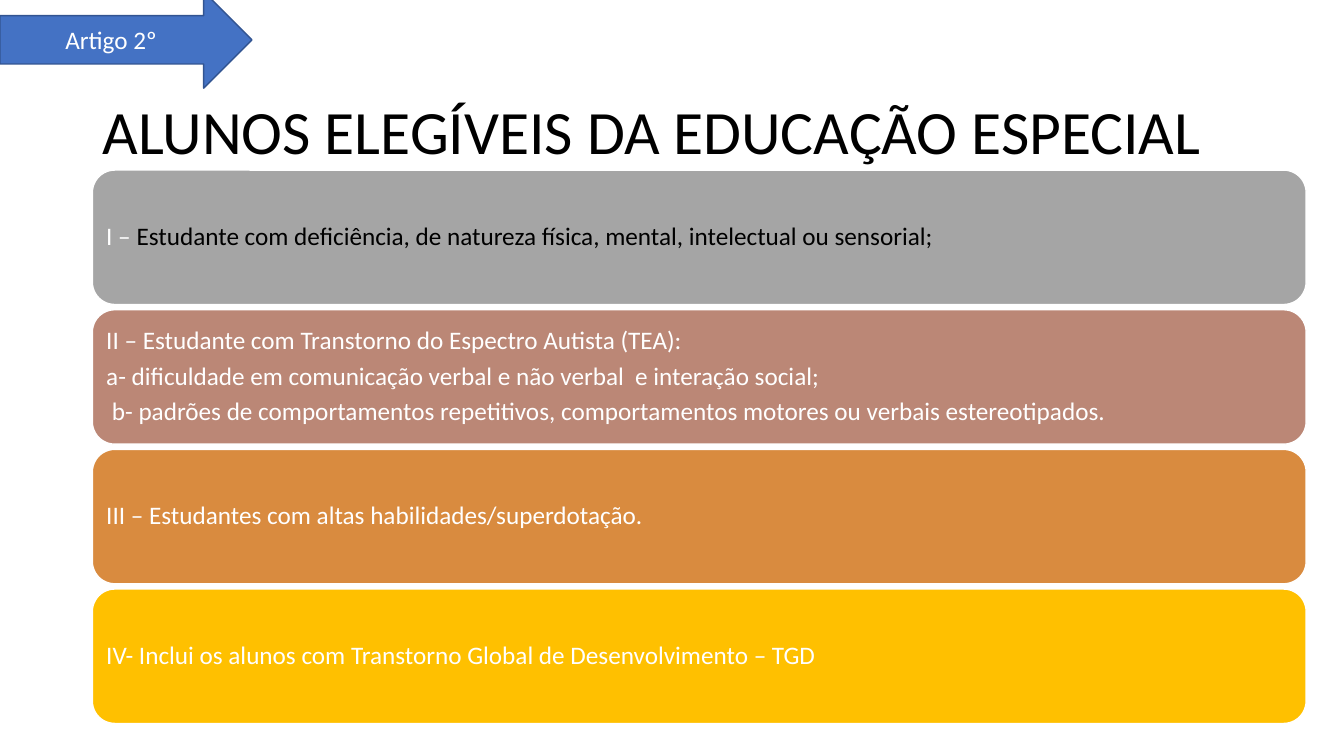
"""Builds the slide listing the students eligible for special education."""
from pptx import Presentation
from pptx.dml.color import RGBColor
from pptx.enum.shapes import MSO_SHAPE
from pptx.enum.text import MSO_ANCHOR, MSO_AUTO_SIZE, PP_ALIGN
from pptx.util import Pt

ROUNDED = MSO_SHAPE.ROUNDED_RECTANGLE
RIGHT_ARROW = MSO_SHAPE.RIGHT_ARROW
MIDDLE = MSO_ANCHOR.MIDDLE
NO_AUTOFIT = MSO_AUTO_SIZE.NONE
LEFT, CENTER = PP_ALIGN.LEFT, PP_ALIGN.CENTER

BLACK = RGBColor(0x00, 0x00, 0x00)
WHITE = RGBColor(0xFF, 0xFF, 0xFF)
GRAY = RGBColor(0xA5, 0xA5, 0xA5)
ROSE = RGBColor(0xBB, 0x87, 0x76)
ORANGE = RGBColor(0xD9, 0x8B, 0x3F)
GOLD = RGBColor(0xFF, 0xC0, 0x00)
BLUE = RGBColor(0x44, 0x72, 0xC4)
DARK_BLUE = RGBColor(0x32, 0x54, 0x91)

FONT = "Calibri"
PX = 9525
MARGIN_LEFT = 88
CARD_TOP, CARD_WIDTH, CARD_HEIGHT, CARD_STEP = 162, 1156, 128, 133
CARD_INSET = 7

CARDS = [
    (GRAY, ["I – Estudante com deficiência, de natureza física, mental, intelectual ou sensorial;"]),
    (ROSE, [
        "II – Estudante com Transtorno do Espectro Autista (TEA):",
        "a- dificuldade em comunicação verbal e não verbal  e interação social;",
        " b- padrões de comportamentos repetitivos, comportamentos motores ou verbais estereotipados.",
    ]),
    (ORANGE, ["III – Estudantes com altas habilidades/superdotação."]),
    (GOLD, ["IV- Inclui os alunos com Transtorno Global de Desenvolvimento – TGD"]),
]


def add_box(kind, left, top, width, height, fill, line):
    shape = slide.shapes.add_shape(kind, left * PX, top * PX, width * PX, height * PX)
    shape.shadow.inherit = False
    shape.fill.solid()
    shape.fill.fore_color.rgb = fill
    shape.line.color.rgb = line
    shape.line.width = Pt(1)
    shape.text_frame.word_wrap = True
    shape.text_frame.vertical_anchor = MIDDLE
    return shape


def format_paragraph(paragraph, size, color, alignment):
    paragraph.alignment = alignment
    for run in paragraph.runs:
        run.font.name = FONT
        run.font.size = Pt(size)
        run.font.color.rgb = color


presentation = Presentation()
presentation.slide_width = 1280 * PX
presentation.slide_height = 720 * PX
slide = presentation.slides.add_slide(presentation.slide_layouts[5])

title = slide.shapes.title
title.left, title.top = MARGIN_LEFT * PX, 78 * PX
title.width, title.height = 1104 * PX, 100 * PX
title.text_frame.text = "ALUNOS ELEGÍVEIS DA EDUCAÇÃO ESPECIAL"
title.text_frame.auto_size = NO_AUTOFIT
title.text_frame.vertical_anchor = MIDDLE
title.text_frame.paragraphs[0].line_spacing = 0.9
format_paragraph(title.text_frame.paragraphs[0], 44, BLACK, LEFT)

for index, (fill, lines) in enumerate(CARDS):
    card = add_box(ROUNDED, MARGIN_LEFT, CARD_TOP + index * CARD_STEP,
                   CARD_WIDTH, CARD_HEIGHT, fill, WHITE)
    frame = card.text_frame
    frame.margin_left = frame.margin_right = CARD_INSET * PX
    frame.margin_top = frame.margin_bottom = CARD_INSET * PX
    frame.text = "\n".join(lines)
    for paragraph in frame.paragraphs:
        paragraph.line_spacing = 0.9
        paragraph.space_after = Pt(6)
        format_paragraph(paragraph, 18, WHITE, LEFT)
    if fill == GRAY:
        paragraph = frame.paragraphs[0]
        numeral, description = lines[0].split("Estudante")
        paragraph.runs[0].text = numeral
        paragraph.add_run().text = "Estudante" + description
        format_paragraph(paragraph, 18, BLACK, LEFT)
        paragraph.runs[0].font.color.rgb = WHITE

arrow = add_box(RIGHT_ARROW, 0, -8, 240, 92, BLUE, DARK_BLUE)
arrow.text_frame.text = "Artigo 2º "
format_paragraph(arrow.text_frame.paragraphs[0], 18, WHITE, CENTER)

presentation.save("out.pptx")
